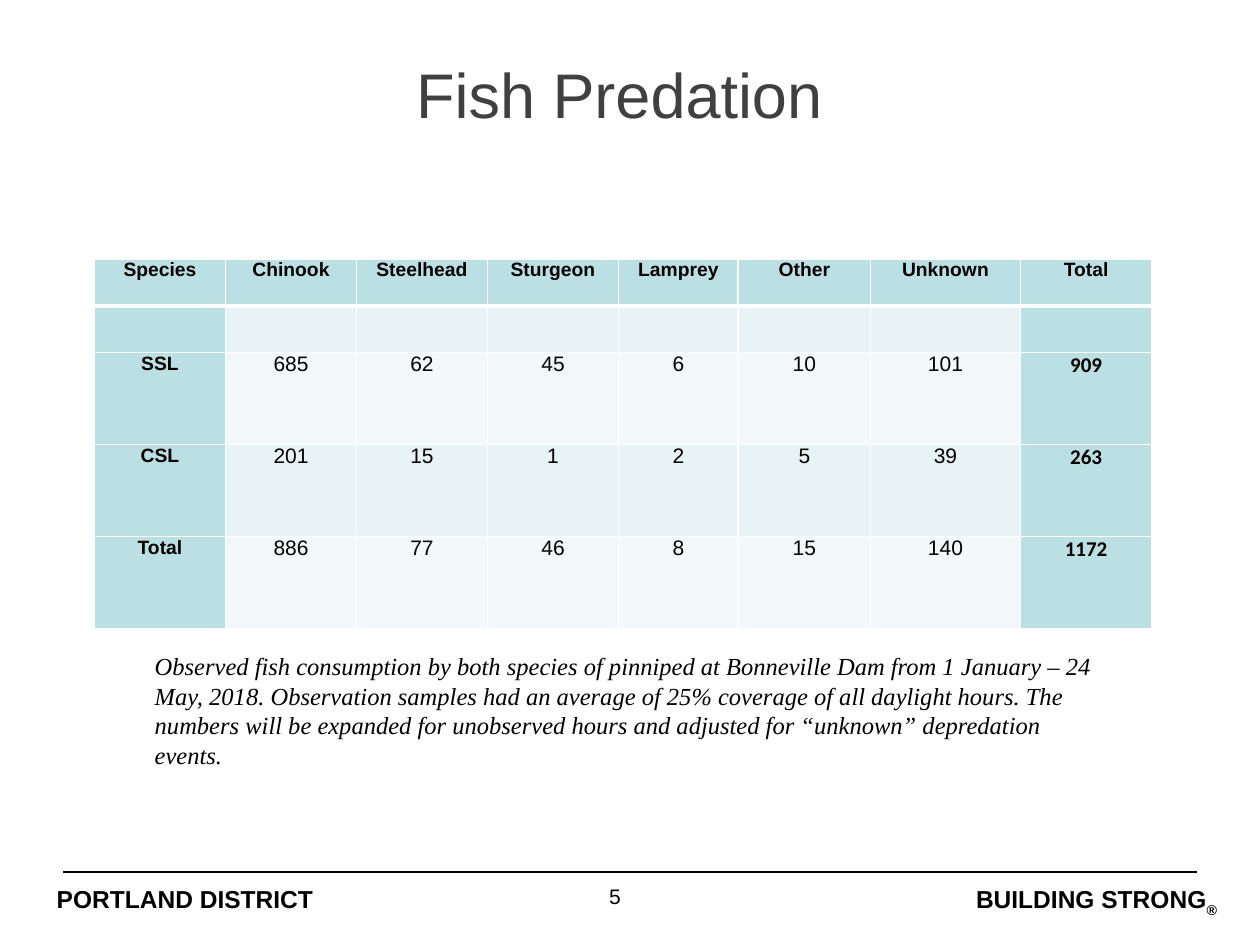
from dataclasses import dataclass

from lxml import etree
from pptx import Presentation
from pptx import util as u
from pptx.dml.color import RGBColor
from pptx.enum import shapes, text
from pptx.oxml import ns

PX = 9144  # EMU per px, 100 px to the inch


@dataclass(frozen=True)
class Theme:
    ink: str = "000000"
    title_ink: str = "404040"
    rule: str = "FFFFFF"
    heading: str = "BBE0E3"
    bands: tuple = ("E7F3F4", "F3F9FA")
    sans: str = "Arial"
    totals: str = "Calibri"
    serif: str = "Times New Roman"
    title_size: int = 36
    text_size: int = 14
    number_size: int = 12
    label_size: int = 11


THEME = Theme()
ALIGN = text.PP_ALIGN

COUNTS = [
    ["Species", "Chinook", "Steelhead", "Sturgeon", "Lamprey", "Other", "Unknown"],
    [""] * 7,
    ["SSL", "685", "62", "45", "6", "10", "101"],
    ["CSL", "201", "15", "1", "2", "5", "39"],
    ["Total", "886", "77", "46", "8", "15", "140"],
]
TOTALS = [["Total"], [""], ["909"], ["263"], ["1172"]]
COUNT_WIDTHS = [104, 104, 104, 104, 95, 105, 119]
TOTAL_WIDTHS = [104]
ROW_HEIGHTS = [37, 37, 73, 73, 73]
NOTE = (
    "Observed fish consumption by both species of pinniped at Bonneville Dam "
    "from 1 January – 24 May, 2018. Observation samples had an average of 25% "
    "coverage of all daylight hours. The numbers will be expanded for unobserved "
    "hours and adjusted for “unknown” depredation events."
)


def emu(*lengths):
    return [u.Emu(length * PX) for length in lengths]


def write(frame, words, size=THEME.text_size, font=THEME.sans, color=THEME.ink,
          bold=False, italic=False, align=ALIGN.LEFT, baseline=None):
    """Add a formatted run to the first paragraph of a text frame."""
    paragraph = frame.paragraphs[0]
    paragraph.alignment = align
    run = paragraph.add_run()
    run.text = words
    run.font.size, run.font.name = u.Pt(size), font
    run.font.bold, run.font.italic = bold, italic
    run.font.color.rgb = RGBColor.from_string(color)
    if baseline is not None:
        run.font._element.set("baseline", str(baseline))


def text_area(slide, box, inset=True):
    frame = slide.shapes.add_textbox(*emu(*box)).text_frame
    frame.word_wrap = True
    frame.auto_size = text.MSO_AUTO_SIZE.SHAPE_TO_FIT_TEXT
    if not inset:
        frame.margin_left = frame.margin_right = 0
        frame.margin_top = frame.margin_bottom = 0
    return frame


def add_title(slide, box):
    title = slide.shapes.title
    title.left, title.top, title.width, title.height = emu(*box)
    title.text_frame.vertical_anchor = text.MSO_ANCHOR.MIDDLE
    write(title.text_frame, "Fish Predation", size=THEME.title_size,
          color=THEME.title_ink, align=ALIGN.CENTER)


def set_borders(cell, row):
    """White rules, thicker between the header and the body."""
    widths = {"L": 1, "R": 1, "T": 3 if row == 1 else 1, "B": 3 if row == 0 else 1}
    properties = cell._tc.get_or_add_tcPr()
    for side, points in widths.items():
        line = etree.SubElement(properties, ns.qn(f"a:ln{side}"), w=str(u.Pt(points)))
        fill = etree.SubElement(line, ns.qn("a:solidFill"))
        etree.SubElement(fill, ns.qn("a:srgbClr"), val=THEME.rule)


def add_count_table(slide, left, top, rows, widths, totals=False):
    box = (left, top, sum(widths), sum(ROW_HEIGHTS))
    table = slide.shapes.add_table(len(rows), len(widths), *emu(*box)).table
    table.first_row = table.horz_banding = False
    for column, width in zip(table.columns, emu(*widths)):
        column.width = width
    for row, height in zip(table.rows, emu(*ROW_HEIGHTS)):
        row.height = height

    for r, values in enumerate(rows):
        for c, value in enumerate(values):
            cell = table.cell(r, c)
            cell.margin_left, cell.margin_right = emu(7, 7)
            cell.margin_top = cell.margin_bottom = 0
            set_borders(cell, r)
            heading = r == 0 or c == 0
            cell.fill.solid()
            cell.fill.fore_color.rgb = RGBColor.from_string(
                THEME.heading if heading else THEME.bands[(r - 1) % 2])
            if value:
                is_total = totals and r > 0
                label = heading and not is_total
                write(cell.text_frame, value, bold=heading, align=ALIGN.CENTER,
                      size=THEME.label_size if label else THEME.number_size,
                      font=THEME.totals if is_total else THEME.sans)


def add_footer(slide, left, top, width):
    # Rule above the footer
    rule = slide.shapes.add_connector(
        shapes.MSO_CONNECTOR.STRAIGHT,
        *emu(left + width, top, left, top))
    rule.line.width = u.Pt(0.75)
    rule.line.color.rgb = RGBColor.from_string(THEME.ink)
    etree.SubElement(rule._element.spPr, ns.qn("a:effectLst"))

    # District, page number and motto
    district = text_area(slide, (left - 5, top + 10, 285, 24), inset=False)
    write(district, "PORTLAND DISTRICT", bold=True)
    page = text_area(slide, (left + 367, top + 4, 142, 30))
    write(page, "5", size=THEME.number_size, align=ALIGN.CENTER)
    motto = text_area(slide, (left + width - 269, top + 10, 285, 24), inset=False)
    write(motto, "BUILDING STRONG", bold=True, align=ALIGN.RIGHT)
    write(motto, "®", bold=True, align=ALIGN.RIGHT, baseline=-25000)


def main():
    deck = Presentation()
    deck.slide_width, deck.slide_height = emu(1000, 750)
    slide = deck.slides.add_slide(deck.slide_layouts[5])

    add_footer(slide, 50, 692, 900)
    add_title(slide, (33, 30, 917, 88))
    add_count_table(slide, 75, 206, COUNTS, COUNT_WIDTHS)
    write(text_area(slide, (113, 512, 780, 104)), NOTE,
          font=THEME.serif, italic=True)
    add_count_table(slide, 75 + sum(COUNT_WIDTHS), 206, TOTALS, TOTAL_WIDTHS,
                    totals=True)

    deck.save("out.pptx")


if __name__ == "__main__":
    main()
